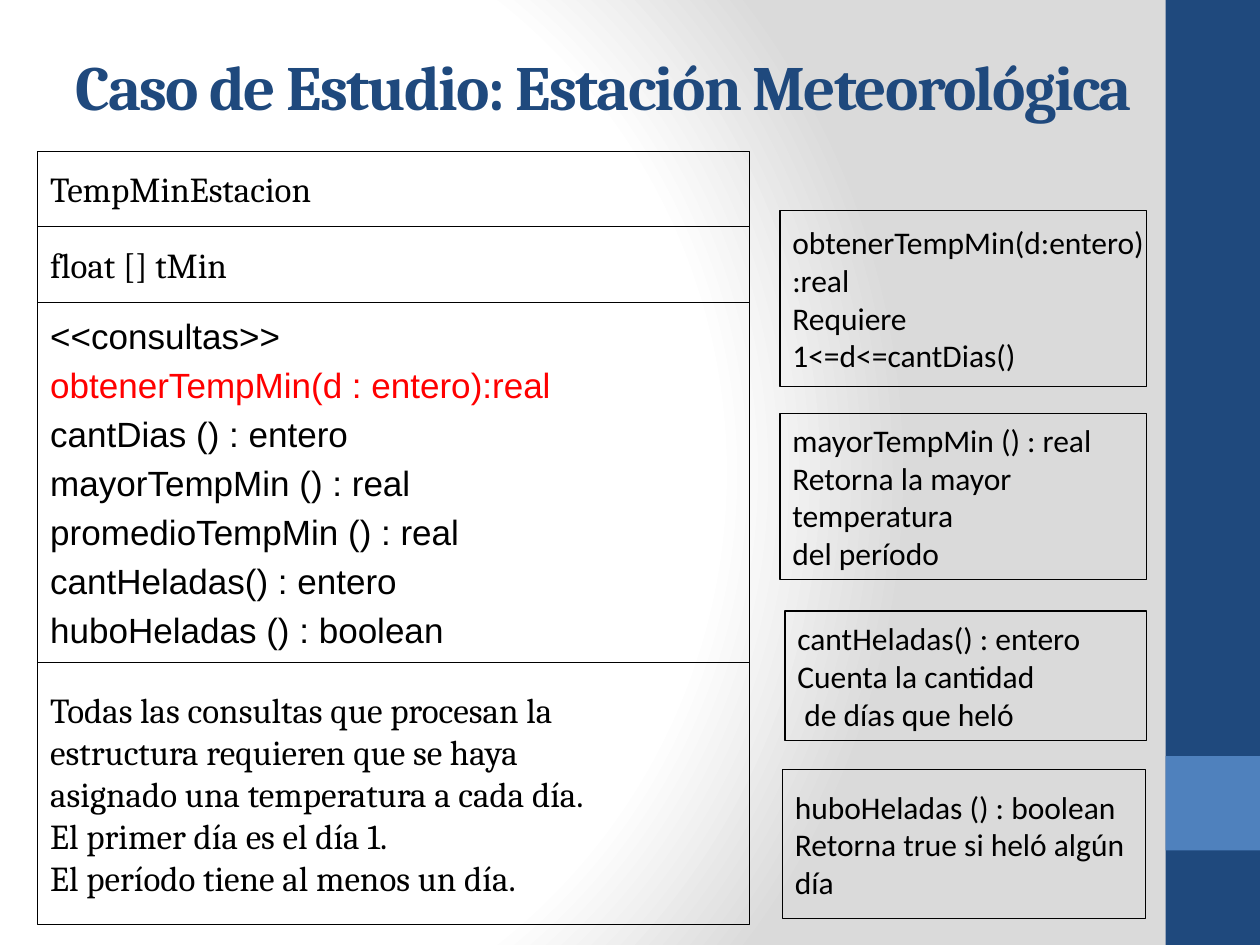
import pptx
import pptx.dml.color
import pptx.enum.shapes
import pptx.enum.text
import pptx.oxml
import pptx.oxml.ns
import pptx.util
from pptx.util import Inches

COLORS = {
    "navy": "1F497D",
    "blue": "4F81BD",
    "black": "000000",
    "red": "FF0000",
    "white": "FFFFFF",
    "gray": "DADADA",
}

CLASS_LEFT, CLASS_TOP, CLASS_WIDTH = 0.3, 1.2, 5.65
QUERIES = [
    "<<consultas>>",
    "obtenerTempMin(d : entero):real",
    "cantDias () : entero",
    "mayorTempMin () : real",
    "promedioTempMin () : real",
    "cantHeladas() : entero",
    "huboHeladas () : boolean",
]
CONSTRAINTS = [
    "Todas las consultas que procesan la",
    "estructura requieren que se haya",
    "asignado una temperatura a cada día.",
    "El primer día es el día 1.",
    "El período tiene al menos un día.",
]
# Height, lines and text format of each compartment, from top to bottom
COMPARTMENTS = [
    (0.6, ["TempMinEstacion"], {}),
    (0.6, ["float [] tMin"], {}),
    (2.86, QUERIES, {"font": "Arial", "space_before": 4, "line_colors": {1: "red"}}),
    (2.08, CONSTRAINTS, {}),
]
# Left, top, width, height and lines of each note
NOTES = [
    (6.19, 1.67, 2.91, 1.4,
     ["obtenerTempMin(d:entero)", ":real", "Requiere", "1<=d<=cantDias()"]),
    (6.19, 3.28, 2.91, 1.32,
     ["mayorTempMin () : real", "Retorna la mayor", "temperatura", "del período"]),
    (6.23, 4.85, 2.87, 1.03,
     ["cantHeladas() : entero", "Cuenta la cantidad", " de días que heló"]),
    (6.21, 6.11, 2.88, 1.18,
     ["huboHeladas () : boolean", "Retorna true si heló algún", "día"]),
]


def rgb(name):
    return pptx.dml.color.RGBColor.from_string(COLORS[name])


def set_background(slide):
    """Fill the background with a circular gradient centred towards the left."""
    slide.background.fill.gradient()
    gradient = slide.element.find(".//" + pptx.oxml.ns.qn("a:gradFill"))
    stops = "".join(
        f'<a:gs pos="{position * 1000}"><a:srgbClr val="{COLORS[color]}"/></a:gs>'
        for position, color in [(0, "white"), (75, "white"), (100, "gray")]
    )
    circular = pptx.oxml.parse_xml(
        f'<a:gradFill {pptx.oxml.ns.nsdecls("a")} rotWithShape="1">'
        f"<a:gsLst>{stops}</a:gsLst>"
        '<a:path path="circle">'
        '<a:fillToRect l="20000" t="50000" r="100000" b="50000"/>'
        "</a:path></a:gradFill>"
    )
    gradient.getparent().replace(gradient, circular)


def add_rectangle(slide, left, top, width, height, fill=None, line=None):
    shape = slide.shapes.add_shape(
        pptx.enum.shapes.MSO_SHAPE.RECTANGLE,
        Inches(left), Inches(top), Inches(width), Inches(height),
    )
    shape.shadow.inherit = False
    if fill:
        shape.fill.solid()
        shape.fill.fore_color.rgb = rgb(fill)
    else:
        shape.fill.background()
    if line:
        shape.line.color.rgb = rgb(line)
        shape.line.width = pptx.util.Pt(0.75)
    else:
        shape.line.fill.background()
    return shape


def write_text(shape, lines, font="Cambria", size=20, color="black", bold=False,
               wrap=False, space_before=0, tracking=0, line_colors=None):
    """Write one paragraph per line; line_colors overrides color by line index."""
    line_colors = line_colors or {}
    frame = shape.text_frame
    frame.word_wrap = wrap
    frame.vertical_anchor = pptx.enum.text.MSO_ANCHOR.MIDDLE
    for index, line in enumerate(lines):
        paragraph = frame.add_paragraph() if index else frame.paragraphs[0]
        paragraph.alignment = pptx.enum.text.PP_ALIGN.LEFT
        paragraph.space_before = pptx.util.Pt(space_before)
        run = paragraph.add_run()
        run.text = line
        run.font.name = font
        run.font.size = pptx.util.Pt(size)
        run.font.bold = bold
        run.font.color.rgb = rgb(line_colors.get(index, color))
        if tracking:
            run.font._element.set("spc", str(tracking * 100))


def add_title(slide, text):
    box = slide.shapes.add_textbox(Inches(0.5), Inches(0.05), Inches(8.98), Inches(1.25))
    write_text(box, [text], size=36, color="navy", bold=True, wrap=True, tracking=-1)


def add_class_diagram(slide):
    top = CLASS_TOP
    for height, lines, text_format in COMPARTMENTS:
        shape = add_rectangle(slide, CLASS_LEFT, top, CLASS_WIDTH, height, line="black")
        write_text(shape, lines, **text_format)
        top += height


def add_notes(slide):
    for left, top, width, height, lines in NOTES:
        shape = add_rectangle(slide, left, top, width, height, line="black")
        write_text(shape, lines, font="Calibri", size=18)


def main():
    presentation = pptx.Presentation()
    presentation.slide_width = Inches(10)
    presentation.slide_height = Inches(7.5)
    slide = presentation.slides.add_slide(presentation.slide_layouts[6])
    set_background(slide)
    add_rectangle(slide, 9.25, 0, 0.75, 7.5, fill="navy")
    add_rectangle(slide, 9.25, 6, 0.75, 0.75, fill="blue")
    add_class_diagram(slide)
    add_notes(slide)
    add_title(slide, "Caso de Estudio: Estación Meteorológica")
    presentation.save("out.pptx")


if __name__ == "__main__":
    main()
